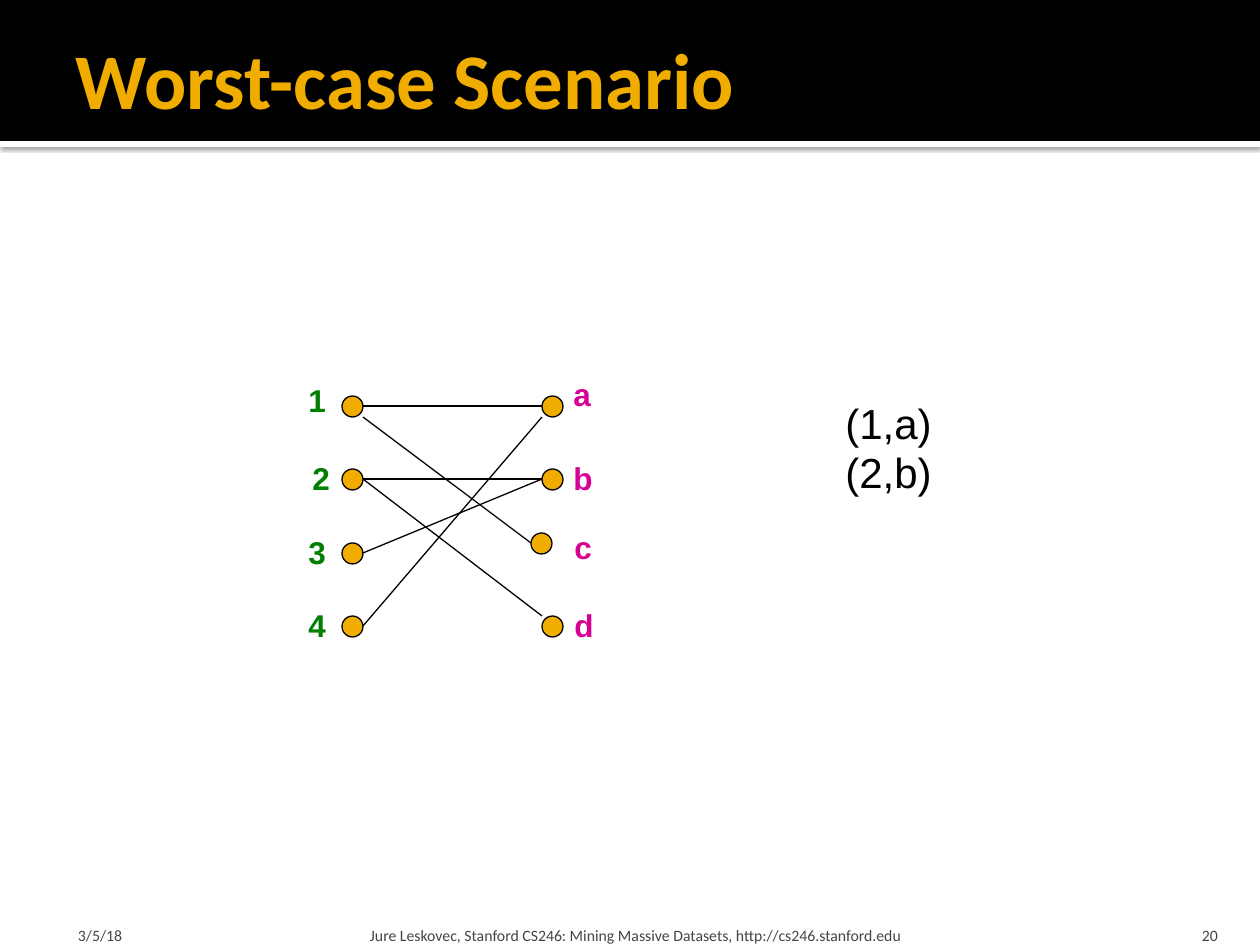
from lxml.etree import SubElement
from pptx import Presentation
from pptx.dml.color import RGBColor
from pptx.enum.shapes import MSO_CONNECTOR, MSO_SHAPE
from pptx.enum.text import MSO_ANCHOR, MSO_AUTO_SIZE, PP_ALIGN
from pptx.oxml.ns import qn
from pptx.util import Emu, Pt

BLACK = RGBColor(0x00, 0x00, 0x00)
WHITE = RGBColor(0xFF, 0xFF, 0xFF)
GOLD = RGBColor(0xF0, 0xAD, 0x00)
GREEN = RGBColor(0x00, 0x80, 0x00)
MAGENTA = RGBColor(0xD6, 0x00, 0x93)
GREY = RGBColor(0x45, 0x45, 0x45)
PX_PER_INCH = 126
NODE_SIZE = 21


def px(length):
    """Turn a length in px into EMU."""
    return Emu(round(length * 914400 / PX_PER_INCH))


def write(shape, text, size, font_name, color, bold=False, align=PP_ALIGN.LEFT):
    """Add one formatted run to the first paragraph of a shape."""
    paragraph = shape.text_frame.paragraphs[0]
    paragraph.alignment = align
    run = paragraph.add_run()
    run.text = text
    run.font.size = Pt(size)
    run.font.name = font_name
    run.font.bold = bold
    run.font.color.rgb = color


def set_frame(shape, anchor, insets):
    """Set wrapping, anchor and px insets of a text frame."""
    frame = shape.text_frame
    frame.word_wrap = True
    frame.auto_size = MSO_AUTO_SIZE.NONE
    frame.vertical_anchor = anchor
    (frame.margin_left, frame.margin_top,
     frame.margin_right, frame.margin_bottom) = map(px, insets)


def add_filled(slide, kind, box, color):
    """Add a preset shape with a plain fill and no outline or shadow."""
    shape = slide.shapes.add_shape(kind, *map(px, box))
    shape.shadow.inherit = False
    shape.fill.solid()
    shape.fill.fore_color.rgb = color
    shape.line.fill.background()
    return shape


def add_label(slide, box, text, size, color, bold=False):
    """Add an unwrapped text box that fits its text."""
    label = slide.shapes.add_textbox(*map(px, box))
    label.text_frame.word_wrap = False
    label.text_frame.auto_size = MSO_AUTO_SIZE.SHAPE_TO_FIT_TEXT
    write(label, text, size, "Arial", color, bold)


def add_node(slide, left, top):
    """Add one outlined graph node."""
    node = add_filled(slide, MSO_SHAPE.OVAL, (left, top, NODE_SIZE, NODE_SIZE), GOLD)
    node.line.color.rgb = BLACK
    node.line.width = Pt(0.75)


def add_edge(slide, start, end):
    """Add one thin line between two points."""
    edge = slide.shapes.add_connector(MSO_CONNECTOR.STRAIGHT, *map(px, start + end))
    edge.line.color.rgb = BLACK
    edge.line.width = Pt(0.75)
    SubElement(edge.element.spPr, qn("a:effectLst"))


def add_header(slide, box):
    """Draw the black band, its white shadowed rim and the title."""
    left, top, width, height = box
    rim = add_filled(slide, MSO_SHAPE.RECTANGLE, (left, top + height, width, 6), WHITE)
    effects = rim.element.spPr.find(qn("a:effectLst"))
    shadow = SubElement(effects, qn("a:outerShdw"), blurRad=str(Pt(2.5)),
                        dist=str(Pt(0.8)), dir="5400000", algn="t", rotWithShape="0")
    color = SubElement(shadow, qn("a:srgbClr"), val=str(BLACK))
    SubElement(color, qn("a:alpha"), val="60000")
    add_filled(slide, MSO_SHAPE.RECTANGLE, box, BLACK)

    title = slide.shapes.title
    title.left, title.top = px(left + 63), px(top + 10)
    title.width, title.height = px(width - 126), px(136)
    set_frame(title, MSO_ANCHOR.MIDDLE, (13, 6, 6, 6))
    write(title, "Worst-case Scenario", 45, "Calibri", GOLD, True)
    title.element.getparent().append(title.element)


def add_graph(slide, box):
    """Draw the bipartite graph with its edges and node labels."""
    left, top, width, height = box
    half = NODE_SIZE // 2
    pitch = (height - NODE_SIZE) / 3
    rows = [round(top + row * pitch) for row in range(4)]
    right = left + width - NODE_SIZE
    number_nodes = {name: (left, row) for name, row in zip("1234", rows)}
    letter_nodes = {name: (right, row) for name, row in zip("abd", rows[:2] + rows[3:])}
    letter_nodes["c"] = (right - 11, rows[2] - 10)

    edges = (("1", half, "a", half), ("4", half, "a", NODE_SIZE),
             ("2", half, "b", half), ("3", half, "b", half),
             ("1", NODE_SIZE, "c", half), ("2", half, "d", 0))
    for number, start_drop, letter, end_drop in edges:
        start_left, start_top = number_nodes[number]
        end_left, end_top = letter_nodes[letter]
        add_edge(slide, (start_left + NODE_SIZE, start_top + start_drop),
                 (end_left, end_top + end_drop))
    for node in (*number_nodes.values(), *letter_nodes.values()):
        add_node(slide, *node)

    labels = (("1", -46, -21, GREEN), ("2", -42, 57, GREEN),
              ("3", -46, 131, GREEN), ("4", -46, 204, GREEN),
              ("a", 219, -27, MAGENTA), ("b", 219, 57, MAGENTA),
              ("c", 220, 126, MAGENTA), ("d", 220, 204, MAGENTA))
    for text, across, down, color in labels:
        add_label(slide, (left + across, top + down, 44, 50), text, 18, color, True)


def add_matching(slide, box):
    """List the matched pairs one below the other."""
    left, top, width, height = box
    for row, pair in enumerate(("(1,a)", "(2,b)")):
        add_label(slide, (left, top + row * 49, width, height - 49), pair, 24, BLACK)


def add_footer(slide, box):
    """Write the date, the course line and the page number."""
    left, top, width, height = box
    course = ("Jure Leskovec, Stanford CS246: Mining Massive Datasets, "
              "http://cs246.stanford.edu")
    parts = ((0, 294, "3/5/18", PP_ALIGN.LEFT, (15, 6, 6, 0)),
             (301, 759, course, PP_ALIGN.LEFT, (6, 6, 6, 0)),
             (width - 101, 101, "20", PP_ALIGN.RIGHT, (13, 6, 13, 0)))
    for across, part_width, text, align, insets in parts:
        part = slide.shapes.add_textbox(px(left + across), px(top),
                                        px(part_width), px(height))
        set_frame(part, MSO_ANCHOR.BOTTOM, insets)
        write(part, text, 9, "Calibri", GREY, align=align)


def main():
    """Build and save the slide."""
    presentation = Presentation()
    presentation.slide_width, presentation.slide_height = px(1260), px(945)
    slide = presentation.slides.add_slide(presentation.slide_layouts[5])
    add_header(slide, (0, 0, 1260, 141))
    add_graph(slide, (342, 396, 221, 241))
    add_matching(slide, (833, 391, 112, 112))
    add_footer(slide, (63, 907, 1168, 38))
    presentation.save("out.pptx")


if __name__ == "__main__":
    main()
